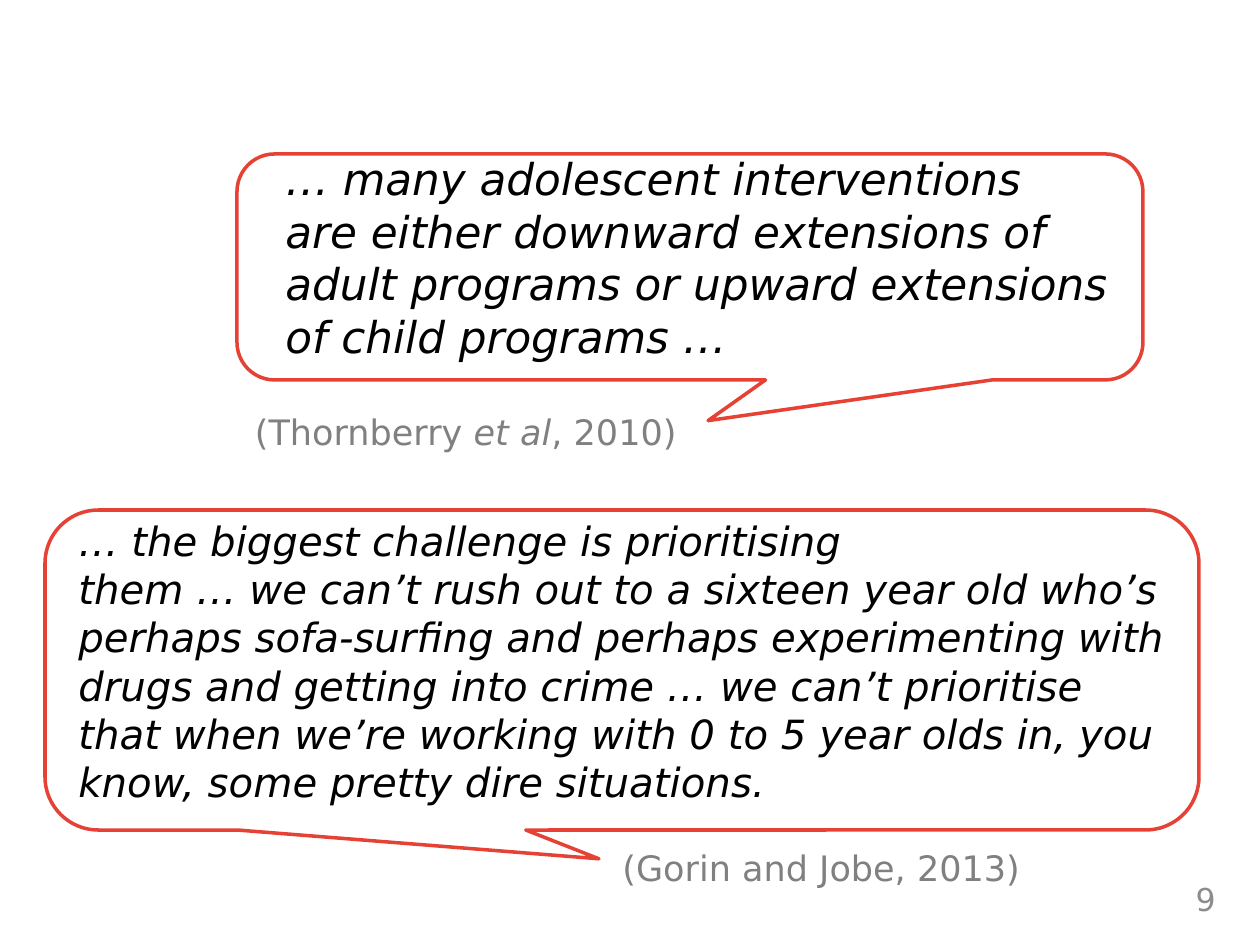
from typing import NamedTuple

from pptx import Presentation
from pptx.dml.color import RGBColor
from pptx.enum.shapes import MSO_SHAPE
from pptx.enum.text import MSO_ANCHOR, MSO_AUTO_SIZE, PP_ALIGN
from pptx.slide import Slide
from pptx.util import Emu, Pt

PX_PER_INCH = 126
FONT = "DejaVu Sans"
BLACK = RGBColor(0x00, 0x00, 0x00)
GREY = RGBColor(0x80, 0x80, 0x80)
NUMBER_GREY = RGBColor(0x8C, 0x8C, 0x8C)
RED = RGBColor(0xE6, 0x41, 0x35)
LEFT, RIGHT = PP_ALIGN.LEFT, PP_ALIGN.RIGHT
TOP, MIDDLE = MSO_ANCHOR.TOP, MSO_ANCHOR.MIDDLE
GROW = MSO_AUTO_SIZE.SHAPE_TO_FIT_TEXT
CALLOUT = MSO_SHAPE.ROUNDED_RECTANGULAR_CALLOUT
BLANK_LAYOUT = 6


class Box(NamedTuple):
    left: int
    top: int
    width: int
    height: int


class Run(NamedTuple):
    text: str
    italic: bool = False
    break_before: bool = False


class Text(NamedTuple):
    box: Box
    runs: list[Run]
    size: int
    color: RGBColor
    align: PP_ALIGN = LEFT
    anchor: MSO_ANCHOR = TOP


class Bubble(NamedTuple):
    """Tip offsets are fractions of the width and height from the centre."""
    box: Box
    tip_x: float
    tip_y: float


TEXTS = [
    Text(Box(273, 146, 863, 233), [
        Run("… many adolescent interventions", True),
        Run("are either downward extensions of adult programs or upward "
            "extensions of child programs …", True, True),
    ], 25, BLACK),
    Text(Box(66, 510, 1114, 305), [
        Run("… the biggest challenge is prioritising", True),
        Run("them … we can’t rush out to a sixteen year old who’s perhaps "
            "sofa-surfing and perhaps experimenting with drugs and getting "
            "into crime … we can’t prioritise that when we’re working with "
            "0 to 5 year olds in, you know, some pretty dire situations.",
            True, True),
    ], 23, BLACK),
    Text(Box(111, 404, 578, 55),
         [Run("(Thornberry "), Run("et al", True), Run(", 2010)")],
         20, GREY, RIGHT),
    Text(Box(610, 840, 547, 55), [Run("(Gorin and Jobe, 2013)")], 20, GREY),
    Text(Box(934, 874, 294, 50), [Run("9")], 18, NUMBER_GREY, RIGHT, MIDDLE),
]

BUBBLES = [
    Bubble(Box(45, 510, 1154, 320), -0.02, 0.59),
    Bubble(Box(237, 154, 906, 226), 0.02, 0.68),
]


def px(length: int) -> Emu:
    return Emu(round(length * 914400 / PX_PER_INCH))


def add_text(slide: Slide, text: Text) -> None:
    shape = slide.shapes.add_textbox(*map(px, text.box))
    frame = shape.text_frame
    frame.word_wrap = True
    frame.vertical_anchor = text.anchor
    if text.anchor == TOP:
        frame.auto_size = GROW
    paragraph = frame.paragraphs[0]
    paragraph.alignment = text.align
    for part in text.runs:
        if part.break_before:
            paragraph.add_line_break()
        run = paragraph.add_run()
        run.text = part.text
        run.font.name = FONT
        run.font.size = Pt(text.size)
        run.font.italic = part.italic
        run.font.color.rgb = text.color


def add_bubble(slide: Slide, bubble: Bubble) -> None:
    shape = slide.shapes.add_shape(CALLOUT, *map(px, bubble.box))
    shape.shadow.inherit = False
    shape.adjustments[0] = bubble.tip_x
    shape.adjustments[1] = bubble.tip_y
    shape.fill.background()
    shape.line.color.rgb = RED
    shape.line.width = Pt(2)


def main() -> None:
    presentation = Presentation()
    presentation.slide_width = px(1260)
    presentation.slide_height = px(945)
    slide = presentation.slides.add_slide(
        presentation.slide_layouts[BLANK_LAYOUT])
    *quotes_and_citations, page_number = TEXTS
    for text in quotes_and_citations:
        add_text(slide, text)
    for bubble in BUBBLES:
        add_bubble(slide, bubble)
    add_text(slide, page_number)
    presentation.save("out.pptx")


if __name__ == "__main__":
    main()
